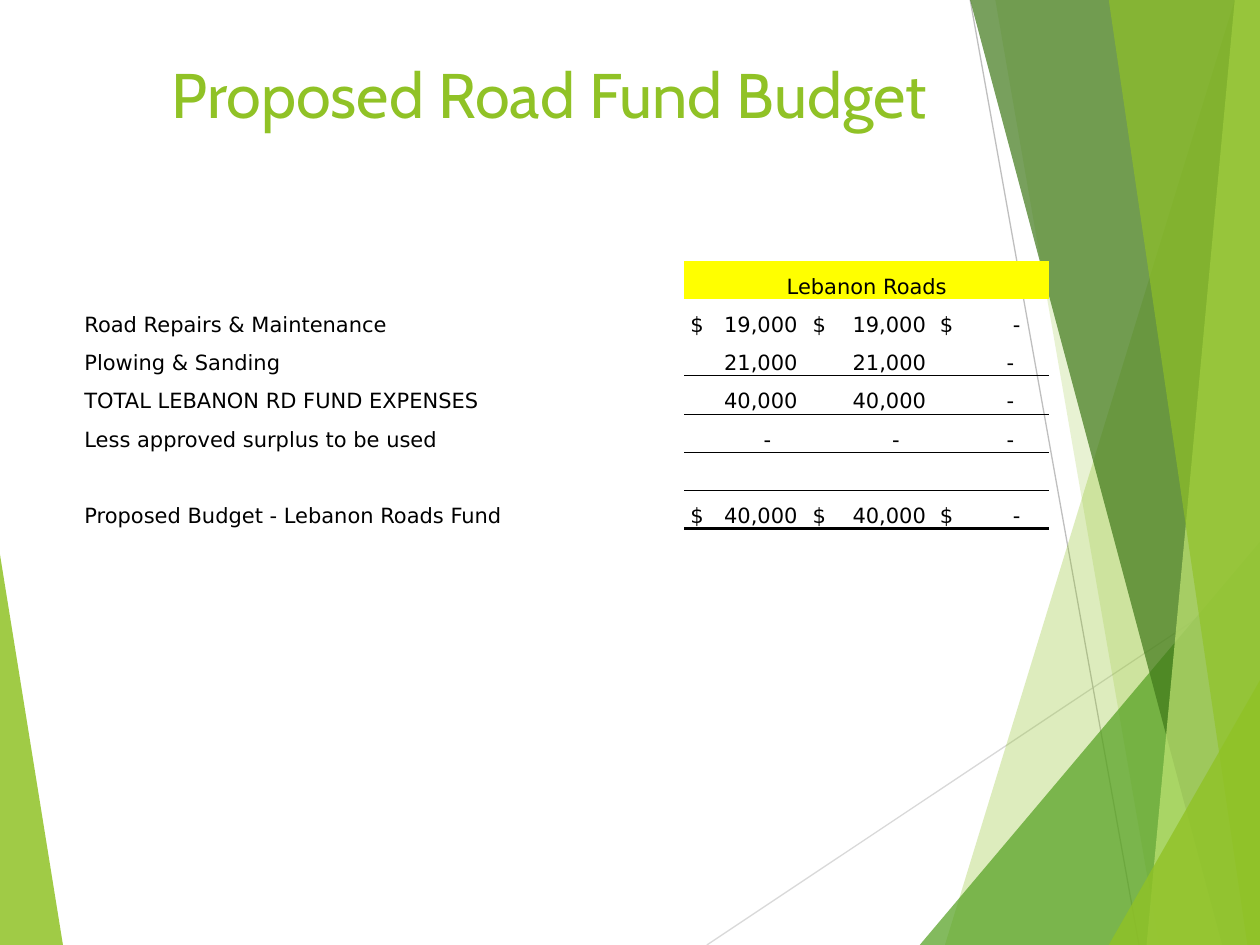
from dataclasses import dataclass

import lxml.etree
import pptx
import pptx.dml.color
import pptx.enum.shapes
import pptx.enum.text
import pptx.oxml
import pptx.oxml.ns
import pptx.util

UNIT = pptx.util.Inches(0.1)
COLUMNS, ROWS = 100, 75
qn = pptx.oxml.ns.qn
ALIGN = pptx.enum.text.PP_ALIGN
ANCHOR = pptx.enum.text.MSO_ANCHOR


@dataclass(frozen=True)
class Theme:
    heading_font: str = "Cabin"
    body_font: str = "DejaVu Sans"
    heading_size: int = 36
    body_size: int = 12
    lime: str = "90C226"
    pale_lime: str = "C0E474"
    green: str = "54A021"
    forest: str = "3F7819"
    light_gray: str = "D9D9D9"
    gray: str = "BFBFBF"
    ink: str = "000000"
    highlight: str = "FFFF00"
    hairline: float = 0.75
    thin_rule: float = 0.5
    thick_rule: float = 2


@dataclass(frozen=True)
class Box:
    left: float
    top: float
    width: float
    height: float

    def emu(self):
        return [grid(n) for n in (self.left, self.top, self.width, self.height)]


THEME = Theme()

LEFT_FACET = [(0, 44.4), (4.9, 75), (0, 75)]
RAYS = [
    ((56.1, 75), (100, 45.75), THEME.light_gray),
    ((77, 0), (90.4, 75), THEME.gray),
]
RIGHT_FACETS = [
    ([(97.5, 0), (75.4, 75), (100, 75), (100, 0)], THEME.lime, 30),
    ([(78.8, 0), (91.9, 75), (100, 75), (100, 0)], THEME.lime, 20),
    ([(72.6, 75), (100, 42.9), (100, 75)], THEME.green, 72),
    ([(76.7, 0), (97, 75), (100, 75), (100, 0)], THEME.forest, 70),
    ([(98.1, 0), (90.7, 75), (100, 75), (100, 0)], THEME.pale_lime, 70),
    ([(88.3, 0), (98.6, 75), (100, 75), (99.8, 0)], THEME.lime, 65),
    ([(88.1, 75), (100, 53.5), (100, 75)], THEME.lime, 80),
]

FUND_COLUMNS = [47.6, 9.7, 10.1, 9.2]
AMOUNT_ENDS = [9, 9.5, 9]
DASH_ENDS = [6.9, 7.4, 6.4]
CURRENCY_INDENT = 0.5
FUND_ROWS = [
    ("Road Repairs & Maintenance", (19000, 19000, 0), True, None),
    ("Plowing & Sanding", (21000, 21000, 0), False, THEME.thin_rule),
    ("TOTAL LEBANON RD FUND EXPENSES", (40000, 40000, 0), False, THEME.thin_rule),
    ("Less approved surplus to be used", (0, 0, 0), False, None),
    ("", (None, None, None), False, THEME.thin_rule),
    ("Proposed Budget - Lebanon Roads Fund", (40000, 40000, 0), True, THEME.thick_rule),
]


def grid(count):
    return pptx.util.Emu(round(count * UNIT))


def rgb(color):
    return pptx.dml.color.RGBColor.from_string(color)


def add_run(paragraph, text, font, size, color):
    run = paragraph.add_run()
    run.text = text
    run.font.name = font
    run.font.size = pptx.util.Pt(size)
    run.font.color.rgb = rgb(color)


def add_facet(slide, box, corners, color, opacity):
    builder = slide.shapes.build_freeform(*corners[0], scale=UNIT)
    builder.add_line_segments(corners[1:], close=True)
    facet = builder.convert_to_shape(grid(box.left), grid(box.top))
    facet.shadow.inherit = False
    facet.fill.solid()
    facet.fill.fore_color.rgb = rgb(color)
    facet.line.fill.background()
    tint = facet.fill._xPr.find(qn("a:solidFill"))[0]
    lxml.etree.SubElement(tint, qn("a:alpha")).set("val", str(opacity * 1000))


def add_ray(slide, box, start, end, color):
    ends = [grid(n + edge) for point in (start, end) for n, edge in zip(point, (box.left, box.top))]
    ray = slide.shapes.add_connector(pptx.enum.shapes.MSO_CONNECTOR.STRAIGHT, *ends)
    ray.line.color.rgb = rgb(color)
    ray.line.width = pptx.util.Pt(THEME.hairline)
    lxml.etree.SubElement(ray._element.spPr, qn("a:effectLst"))


def add_backdrop(slide, box):
    add_facet(slide, box, LEFT_FACET, THEME.lime, 85)
    for start, end, color in RAYS:
        add_ray(slide, box, start, end, color)
    for corners, color, opacity in RIGHT_FACETS:
        add_facet(slide, box, corners, color, opacity)


def add_heading(slide, box):
    heading = slide.shapes.add_textbox(*box.emu()).text_frame
    heading.word_wrap = True
    heading.vertical_anchor = ANCHOR.TOP
    line = heading.paragraphs[0]
    line.alignment = ALIGN.CENTER
    add_run(line, "Proposed Road Fund Budget", THEME.heading_font, THEME.heading_size, THEME.lime)


def fill_cell(cell, text, align=ALIGN.LEFT):
    cell.margin_left = cell.margin_right = cell.margin_top = cell.margin_bottom = 0
    cell.vertical_anchor = ANCHOR.BOTTOM
    cell.fill.background()
    paragraph = cell.text_frame.paragraphs[0]
    paragraph.alignment = align
    if text:
        add_run(paragraph, text, THEME.body_font, THEME.body_size, THEME.ink)
    else:
        end = lxml.etree.SubElement(paragraph._p, qn("a:endParaRPr"))
        end.set("sz", str(THEME.body_size * 100))


def add_rule(cell, side, weight):
    rule = lxml.etree.Element(qn(side), w=str(pptx.util.Pt(weight)))
    paint = lxml.etree.SubElement(rule, qn("a:solidFill"))
    lxml.etree.SubElement(paint, qn("a:srgbClr")).set("val", THEME.ink)
    cell._tc.get_or_add_tcPr().insert(0, rule)


def fill_amount(cell, value, column, currency):
    if value is None:
        fill_cell(cell, "")
        return
    amount = f"{value:,}" if value else "-"
    end = AMOUNT_ENDS[column] if value else DASH_ENDS[column]
    if not currency:
        fill_cell(cell, amount, ALIGN.RIGHT)
        cell.margin_right = grid(FUND_COLUMNS[column + 1] - end)
        return
    if not value:
        end += CURRENCY_INDENT
    fill_cell(cell, f"$\t{amount}")
    cell.margin_left = grid(CURRENCY_INDENT)
    properties = cell.text_frame.paragraphs[0]._p.get_or_add_pPr()
    stops = lxml.etree.SubElement(properties, qn("a:tabLst"))
    lxml.etree.SubElement(stops, qn("a:tab"), pos=str(grid(end - CURRENCY_INDENT)), algn="r")


def add_fund_table(slide, box):
    row_count = len(FUND_ROWS) + 1
    frame = slide.shapes.add_table(row_count, len(FUND_COLUMNS), *box.emu())
    fund = frame.table
    fund.first_row = fund.horz_banding = False
    fund._tbl.tblPr.find(qn("a:tableStyleId")).text = "{2D5ABB26-0587-4C30-8999-92F81FD0307C}"
    for column, width in zip(fund.columns, FUND_COLUMNS):
        column.width = grid(width)
    for row in fund.rows:
        row.height = grid(box.height / row_count)

    fill_cell(fund.cell(0, 0), "")
    banner = fund.cell(0, 1)
    banner.merge(fund.cell(0, 3))
    fill_cell(banner, "Lebanon Roads", ALIGN.CENTER)
    banner.fill.solid()
    banner.fill.fore_color.rgb = rgb(THEME.highlight)

    rule_above = None
    for index, (label, amounts, currency, rule_below) in enumerate(FUND_ROWS, 1):
        fill_cell(fund.cell(index, 0), label)
        for column, value in enumerate(amounts):
            cell = fund.cell(index, column + 1)
            fill_amount(cell, value, column, currency)
            for side, weight in (("a:lnB", rule_below), ("a:lnT", rule_above)):
                if weight:
                    add_rule(cell, side, weight)
        rule_above = rule_below


def main():
    deck = pptx.Presentation()
    deck.slide_width, deck.slide_height = grid(COLUMNS), grid(ROWS)
    slide = deck.slides.add_slide(deck.slide_layouts[6])
    add_backdrop(slide, Box(0, 0, COLUMNS, ROWS))
    add_heading(slide, Box(8.9, 3.9, 69.4, 14.4))
    add_fund_table(slide, Box(6.7, 20.7, sum(FUND_COLUMNS), 21.3))
    deck.save("out.pptx")


if __name__ == "__main__":
    main()
